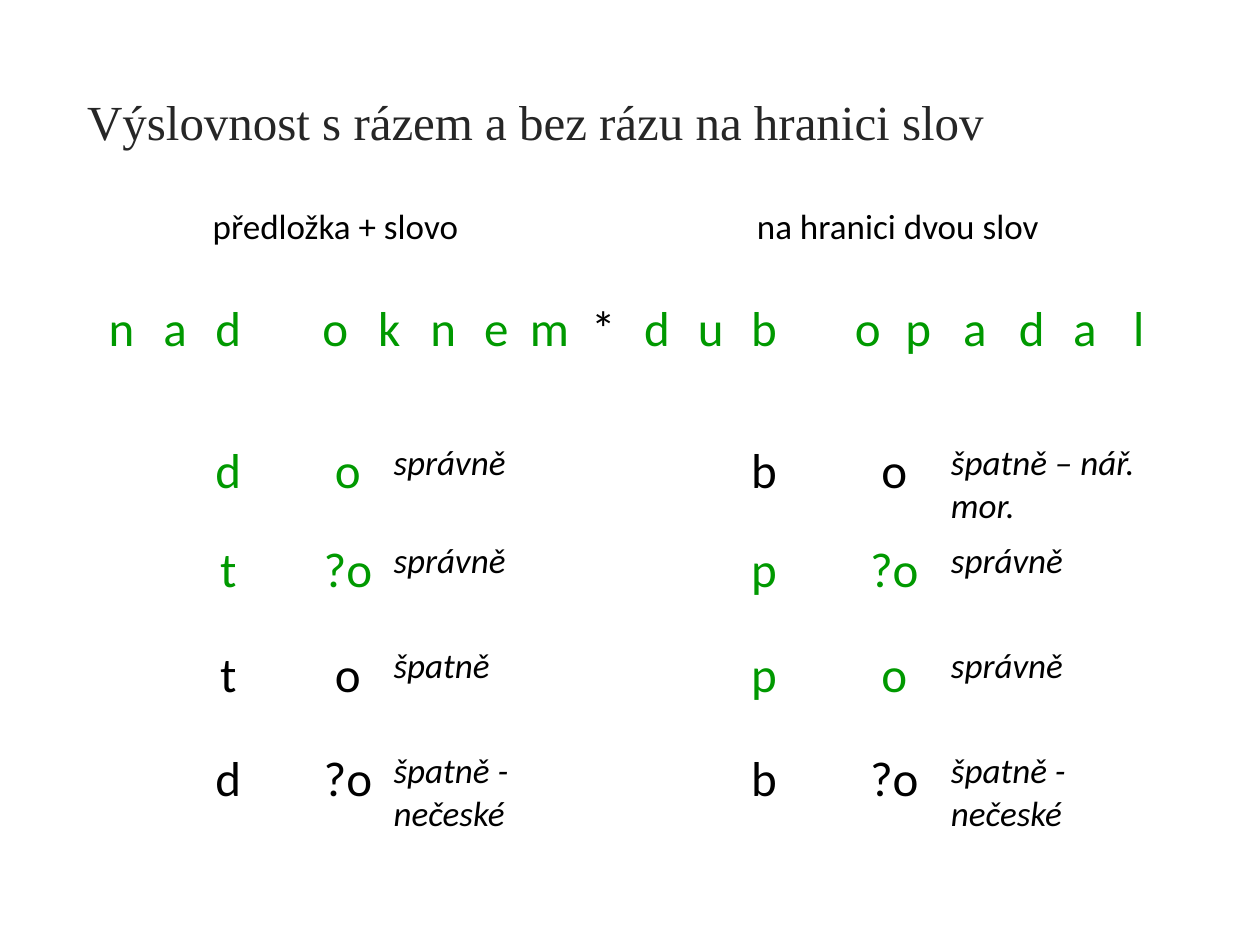
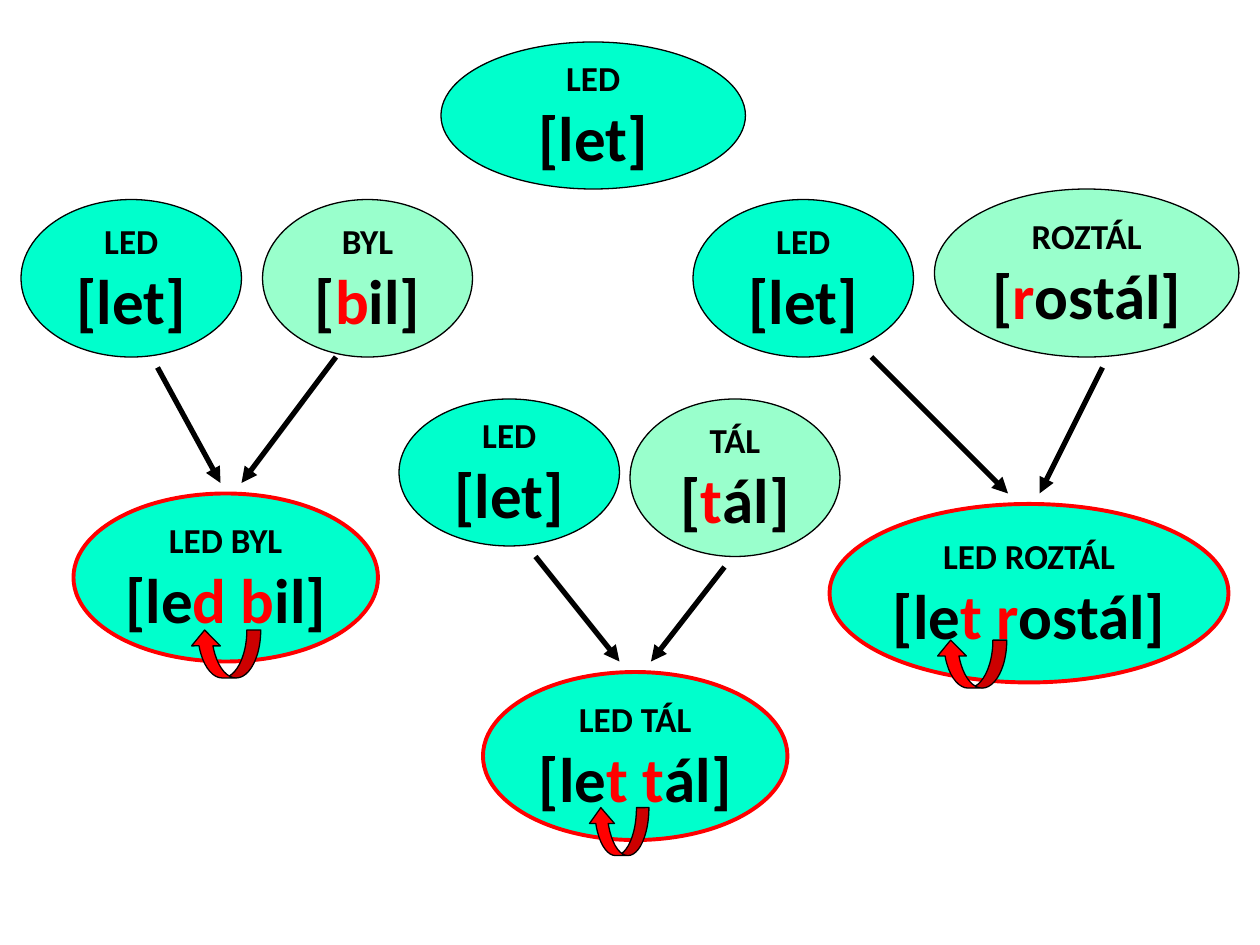
import pptx
import pptx.util
import pptx.dml.color
import pptx.enum.shapes
import pptx.enum.text
import pptx.oxml
import pptx.oxml.ns
import lxml.etree

Pt = pptx.util.Pt
RGBColor = pptx.dml.color.RGBColor
Shape = pptx.enum.shapes.MSO_SHAPE
Align = pptx.enum.text.PP_ALIGN
Anchor = pptx.enum.text.MSO_ANCHOR

BLACK = RGBColor(0x00, 0x00, 0x00)
TITLE_GREY = RGBColor(0x26, 0x26, 0x26)
GREEN = RGBColor(0x00, 0x99, 0x00)
RED = RGBColor(0xFF, 0x00, 0x00)
TURQUOISE = RGBColor(0x00, 0xFF, 0xCC)
MINT = RGBColor(0x99, 0xFF, 0xCC)

BODY_FONT = "Calibri"
TITLE_FONT = "Times New Roman"
MARGIN = 3.6

TITLE = "Výslovnost s rázem a bez rázu na hranici slov"
HEADINGS = ["předložka + slovo", "na hranici dvou slov"]
LETTERS = "nad ok nem*dub opadal"
CORRECT = "správně"
PRONUNCIATIONS = [
    [("d", "o", CORRECT), ("b", "o", "špatně – nář. mor.")],
    [("t", "?o", CORRECT), ("p", "?o", CORRECT)],
    [("t", "o", "špatně"), ("p", "o", CORRECT)],
    [("d", "?o", "špatně - nečeské"), ("b", "?o", "špatně - nečeské")],
]
LETTER_WIDTH = 30.75
SPECIAL_WIDTHS = {2: 30, 5: 14.4, 6: 16.6, 8: 30, 13: 30,
                  15: 27.4, 16: 30.2, 17: 34.6, 18: 30.2}
ROW_HEIGHTS = [54, 81, 55.5, 60, 60, 55.5]
HALF_STARTS = [0, 11]

LET = ("[let]", "", "")
WORDS = [
    ("LED", LET, (252, 24, 174, 84), TURQUOISE),
    ("BYL", ("[", "b", "il]"), (150, 114, 120, 90), MINT),
    ("LED", LET, (12, 114, 126, 90), TURQUOISE),
    ("LED", LET, (228, 228, 126, 84), TURQUOISE),
    ("TÁL", ("[", "t", "ál]"), (360, 228, 120, 90), MINT),
    ("LED", LET, (396, 114, 126, 90), TURQUOISE),
    ("ROZTÁL", ("[", "r", "ostál]"), (534, 108, 174, 96), MINT),
]
PAIRS = [
    ("LED BYL", ("[le", "d b", "il]"), (42, 282, 174, 96)),
    ("LED TÁL", ("[le", "t t", "ál]"), (276, 384, 174, 96)),
    ("LED ROZTÁL", ("[le", "t r", "ostál]"), (474, 288, 228, 102)),
]
ARROWS = [
    ((192, 204), (138, 276)), ((90, 210), (126, 276)),
    ((306, 318), (354, 378)), ((414, 324), (372, 378)),
    ((498, 204), (576, 282)), ((630, 210), (594, 282)),
]
ASSIMILATIONS = [
    ((108.7, 360, 40.3, 27.4), (0.29, 0.6, 0.33)),
    ((336.2, 461.5, 34.6, 27.4), (0.26, 0.52, 0.33)),
    ((535, 365.8, 40.3, 27.4), (0.29, 0.6, 0.33)),
]


def points(lengths):
    return [Pt(length) for length in lengths]


def write_text(paragraph, text, size=28, color=BLACK, font=BODY_FONT,
               bold=False, italic=False, align=Align.CENTER):
    paragraph.alignment = align
    run = paragraph.add_run()
    run.text = text
    run.font.name = font
    run.font.size = Pt(size)
    run.font.color.rgb = color
    run.font.bold = bold
    run.font.italic = italic


def set_margins(box):
    box.margin_left = box.margin_right = Pt(MARGIN)
    box.margin_top = box.margin_bottom = Pt(MARGIN)


def add_letter_table(slide):
    widths = [SPECIAL_WIDTHS.get(column, LETTER_WIDTH) for column in range(len(LETTERS))]
    frame = slide.shapes.add_table(len(ROW_HEIGHTS), len(widths),
                                   *points((54, 114, sum(widths), sum(ROW_HEIGHTS))))
    table = frame.table
    table.first_row = table.horz_banding = False
    for column, width in zip(table.columns, widths):
        column.width = Pt(width)
    for row, height in zip(table.rows, ROW_HEIGHTS):
        row.height = Pt(height)
    for cell in table.iter_cells():
        cell.fill.background()
        set_margins(cell)

    def fill_cell(row, first, last, text, **style):
        cell = table.cell(row, first)
        if last > first:
            cell.merge(table.cell(row, last))
        write_text(cell.text_frame.paragraphs[0], text, **style)

    for start, heading in zip(HALF_STARTS, HEADINGS):
        fill_cell(0, start, start + 9, heading, size=20)
    for column, letter in enumerate(LETTERS):
        if letter != " ":
            last = column + 1 if letter == "k" else column
            fill_cell(1, column, last, letter, color=BLACK if letter == "*" else GREEN)
    for row, halves in enumerate(PRONUNCIATIONS, 2):
        for start, (consonant, vowel, verdict) in zip(HALF_STARTS, halves):
            color = GREEN if verdict == CORRECT else BLACK
            fill_cell(row, start + 2, start + 2, consonant, color=color)
            fill_cell(row, start + 4, start + 5, vowel, color=color)
            fill_cell(row, start + 6, start + 9, verdict, size=20,
                      italic=True, align=Align.LEFT)


def add_bubble(slide, spelling, sounds, place, fill, line=BLACK, line_width=0.75):
    group = slide.shapes.add_group_shape()
    ellipse = group.shapes.add_shape(Shape.OVAL, *points(place))
    ellipse.shadow.inherit = False
    ellipse.fill.solid()
    ellipse.fill.fore_color.rgb = fill
    ellipse.line.color.rgb = line
    ellipse.line.width = Pt(line_width)

    left, top, width, height = place
    text_height = 75
    box = group.shapes.add_textbox(
        *points((left, top + (height - text_height) / 2, width, text_height)))
    frame = box.text_frame
    frame.word_wrap = True
    frame.vertical_anchor = Anchor.MIDDLE
    set_margins(frame)
    write_text(frame.paragraphs[0], spelling, size=20, bold=True)
    paragraph = frame.add_paragraph()
    for sound, color in zip(sounds, (BLACK, RED, BLACK)):
        if sound:
            write_text(paragraph, sound, size=36, color=color, bold=True)


def add_arrow(slide, start, end):
    arrow = slide.shapes.add_connector(pptx.enum.shapes.MSO_CONNECTOR.STRAIGHT,
                                       *points(start + end))
    arrow.line.color.rgb = BLACK
    arrow.line.width = Pt(3)
    qualified = pptx.oxml.ns.qn
    properties = arrow.element.spPr
    line = properties.find(qualified("a:ln"))
    lxml.etree.SubElement(line, qualified("a:tailEnd"), type="triangle")
    lxml.etree.SubElement(properties, qualified("a:effectLst"))


def add_assimilation(slide, place, adjustments):
    arrow = slide.shapes.add_shape(Shape.CURVED_DOWN_ARROW, *points(place))
    arrow.rotation = 180
    arrow.shadow.inherit = False
    arrow.fill.solid()
    arrow.fill.fore_color.rgb = RED
    arrow.line.color.rgb = BLACK
    arrow.line.width = Pt(0.75)
    for index, value in enumerate(adjustments):
        arrow.adjustments[index] = value


def build_table_slide(presentation):
    slide = presentation.slides.add_slide(presentation.slide_layouts[5])
    title = slide.shapes.title
    title.left, title.top, title.width, title.height = points((0, 24, 612, 90))
    title.text_frame.vertical_anchor = Anchor.MIDDLE
    write_text(title.text_frame.paragraphs[0], TITLE, color=TITLE_GREY, font=TITLE_FONT)
    add_letter_table(slide)


def build_bubble_slide(presentation):
    slide = presentation.slides.add_slide(presentation.slide_layouts[6])
    for spelling, sounds, place in PAIRS:
        add_bubble(slide, spelling, sounds, place, TURQUOISE, line=RED, line_width=2.25)
    for word in WORDS:
        add_bubble(slide, *word)
    for start, end in ARROWS:
        add_arrow(slide, start, end)
    for place, adjustments in ASSIMILATIONS:
        add_assimilation(slide, place, adjustments)


def main():
    presentation = pptx.Presentation()
    presentation.slide_width, presentation.slide_height = Pt(720), Pt(540)
    build_table_slide(presentation)
    build_bubble_slide(presentation)
    presentation.save("out.pptx")


if __name__ == "__main__":
    main()
